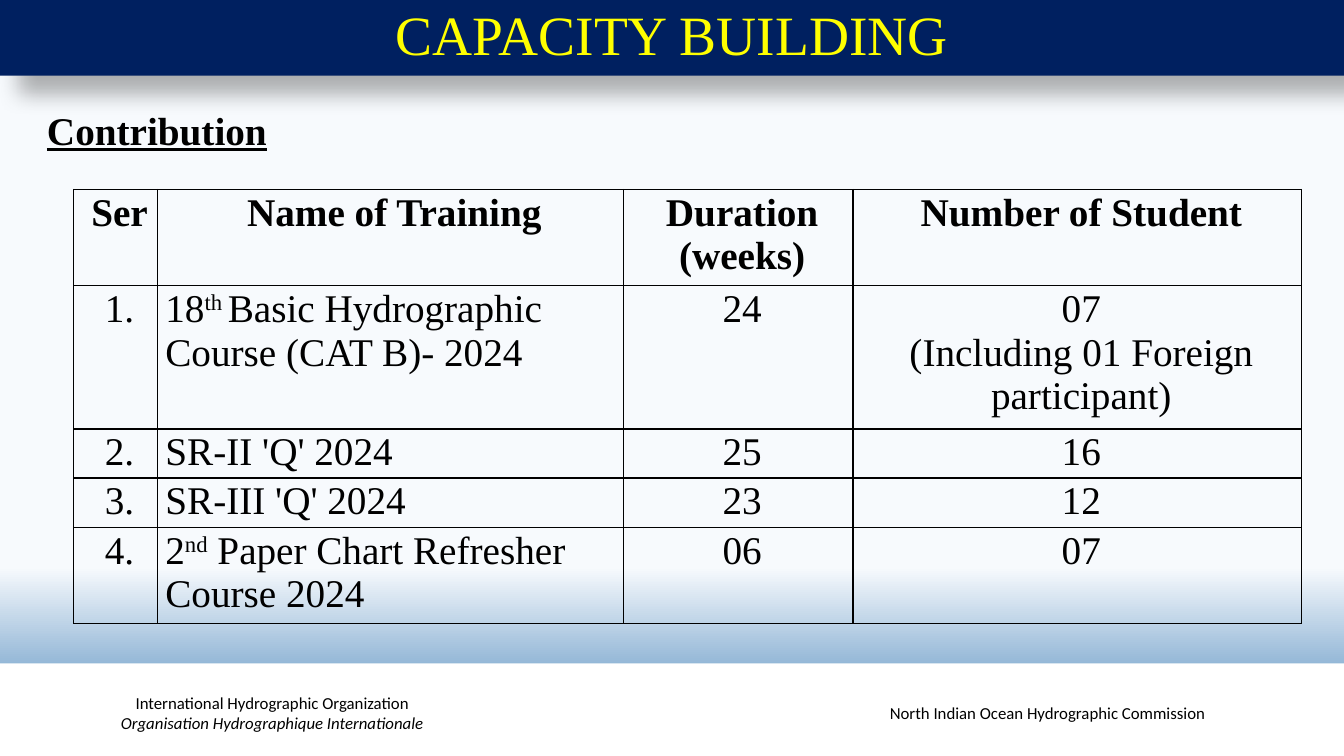
from dataclasses import dataclass

from lxml import etree
from pptx import Presentation
from pptx import util as u
from pptx.dml.color import RGBColor
from pptx.enum import shapes, text
from pptx.oxml.ns import qn

WHITE = RGBColor(0xFF, 0xFF, 0xFF)
BLACK = RGBColor(0, 0, 0)
NAVY = RGBColor(0, 0x20, 0x60)
YELLOW = RGBColor(0xFF, 0xFF, 0)
MIST = RGBColor(0xF7, 0xFA, 0xFD)
BLUE = RGBColor(0x34, 0x77, 0xB2)

SERIF, SANS = "Times New Roman", "Calibri"
WIDE, HIGH = u.Inches(13.33), u.Inches(7.5)
LEFT, MID = text.PP_ALIGN.LEFT, text.PP_ALIGN.CENTER

# Column widths and row heights, in percent of the slide
COLS = (6.23, 34.66, 17.1, 33.38)
ROWS = (10.4, 17.73, 6, 6, 12.67)


@dataclass(frozen=True)
class Area:
    """A place on the slide, in percent of its width and height."""
    x: float
    y: float
    w: float
    h: float

    def emu(self) -> tuple[int, int, int, int]:
        return across(self.x), down(self.y), across(self.w), down(self.h)


@dataclass(frozen=True)
class Style:
    size: float
    face: str = SERIF
    tint: RGBColor = BLACK
    bold: bool = False
    line: bool = False


@dataclass(frozen=True)
class Course:
    name: str  # text between ^ marks is raised
    weeks: str
    count: str


@dataclass(frozen=True)
class Credit:
    x: float
    words: str


COURSES = (
    Course("18^th ^Basic Hydrographic Course (CAT B)- 2024", "24",
           "07\n(Including 01 Foreign participant)"),
    Course("SR-II 'Q' 2024", "25", "16"),
    Course("SR-III 'Q' 2024", "23", "12"),
    Course("2^nd^ Paper Chart Refresher Course 2024", "06", "07"),
)
CREDITS = (
    Credit(3.38, "International Hydrographic Organization\v"
                 "Organisation Hydrographique Internationale"),
    Credit(61.07, "North Indian Ocean Hydrographic Commission"),
)


def across(share: float) -> int:
    return round(WIDE * share / 100)


def down(share: float) -> int:
    return round(HIGH * share / 100)


def dress(frame, style: Style, align=MID) -> None:
    for para in frame.paragraphs:
        para.alignment = align
        for run in para.runs:
            font = run.font
            font.name, font.size = style.face, u.Pt(style.size)
            font.bold, font.underline = style.bold, style.line
            font.color.rgb = style.tint


def write(slide, area: Area, words: str, style: Style, align=MID):
    frame = slide.shapes.add_textbox(*area.emu()).text_frame
    frame.word_wrap = True
    frame.vertical_anchor = text.MSO_ANCHOR.MIDDLE
    frame.text = words
    dress(frame, style, align)
    return frame


def block(slide, area: Area, tint: RGBColor):
    shape = slide.shapes.add_shape(shapes.MSO_SHAPE.RECTANGLE, *area.emu())
    shape.shadow.inherit = False
    shape.fill.solid()
    shape.fill.fore_color.rgb = tint
    shape.line.fill.background()
    return shape


def shade(shape) -> None:
    """Cast a soft shadow down and to the right."""
    effects = shape._element.spPr.find(qn("a:effectLst"))
    cast = etree.SubElement(effects, qn("a:outerShdw"), blurRad=str(u.Pt(15)),
                            dist=str(u.Pt(18)), dir=str(45 * 60000),
                            algn="tl", rotWithShape="0")
    tint = etree.SubElement(cast, qn("a:srgbClr"), val=str(BLACK))
    etree.SubElement(tint, qn("a:alpha"), val="30000")


def frame_cell(cell) -> None:
    """Draw a thin line on all four sides and leave the cell clear."""
    props = cell._tc.get_or_add_tcPr()
    for side in "LRTB":
        edge = etree.SubElement(props, qn(f"a:ln{side}"), w=str(u.Pt(1)))
        fill = etree.SubElement(edge, qn("a:solidFill"))
        etree.SubElement(fill, qn("a:srgbClr"), val=str(BLACK))
    cell.fill.background()


def fill_cell(cell, words: str, style: Style, align) -> None:
    frame_cell(cell)
    cell.margin_left, cell.margin_top = u.Inches(0.08), u.Inches(0.02)
    cell.margin_right = cell.margin_bottom = 0
    if "^" in words:
        para = cell.text_frame.paragraphs[0]
        for place, part in enumerate(words.split("^")):
            run = para.add_run()
            run.text = part
            if place % 2:
                run._r.get_or_add_rPr().set("baseline", "30000")
    else:
        cell.text_frame.text = words
    dress(cell.text_frame, style, align)


def add_grid(slide) -> None:
    area = Area(5.48, 25.07, sum(COLS), sum(ROWS))
    table = slide.shapes.add_table(len(ROWS), len(COLS), *area.emu()).table
    table.first_row = table.horz_banding = False
    for col, share in zip(table.columns, COLS):
        col.width = across(share)
    for row, share in zip(table.rows, ROWS):
        row.height = down(share)
    lines = [("Ser", "Name of Training", "Duration (weeks)", "Number of Student")]
    lines += [(f"{n}.", c.name, c.weeks, c.count)
              for n, c in enumerate(COURSES, 1)]
    for r, line in enumerate(lines):
        for c, words in enumerate(line):
            align = LEFT if r and c == 1 else MID
            fill_cell(table.cell(r, c), words, Style(28, bold=r == 0), align)


def paint(slide) -> None:
    """Fade the background to blue over its last quarter."""
    fill = slide.background.fill
    fill.gradient()
    fill.gradient_angle = 270
    for stop, place, tint in zip(fill.gradient_stops, (0.75, 1), (MIST, BLUE)):
        stop.position = place
        stop.color.rgb = tint


def main() -> None:
    deck = Presentation()
    deck.slide_width, deck.slide_height = WIDE, HIGH
    slide = deck.slides.add_slide(deck.slide_layouts[6])
    paint(slide)

    block(slide, Area(0, 87.73, 100, 12.27), WHITE)
    for credit in CREDITS:
        area = Area(credit.x, 91.6, 33.76, 5.33)
        frame = write(slide, area, credit.words, Style(12, SANS))
        for run in frame.paragraphs[0].runs[1:]:
            run.font.italic = True

    band = block(slide, Area(0, 0, 100, 10), NAVY)
    shade(band)
    title = band.text_frame
    title.text = "CAPACITY BUILDING"
    title.vertical_anchor = text.MSO_ANCHOR.MIDDLE
    title.paragraphs[0].line_spacing = 0.9
    dress(title, Style(39.6, tint=YELLOW))

    add_grid(slide)
    head = write(slide, Area(3.5, 13.87, 21, 6.53), "Contribution",
                 Style(28, bold=True, line=True), LEFT)
    head.margin_left = head.margin_right = 0
    head.margin_top = head.margin_bottom = 0
    deck.save("out.pptx")


if __name__ == "__main__":
    main()
